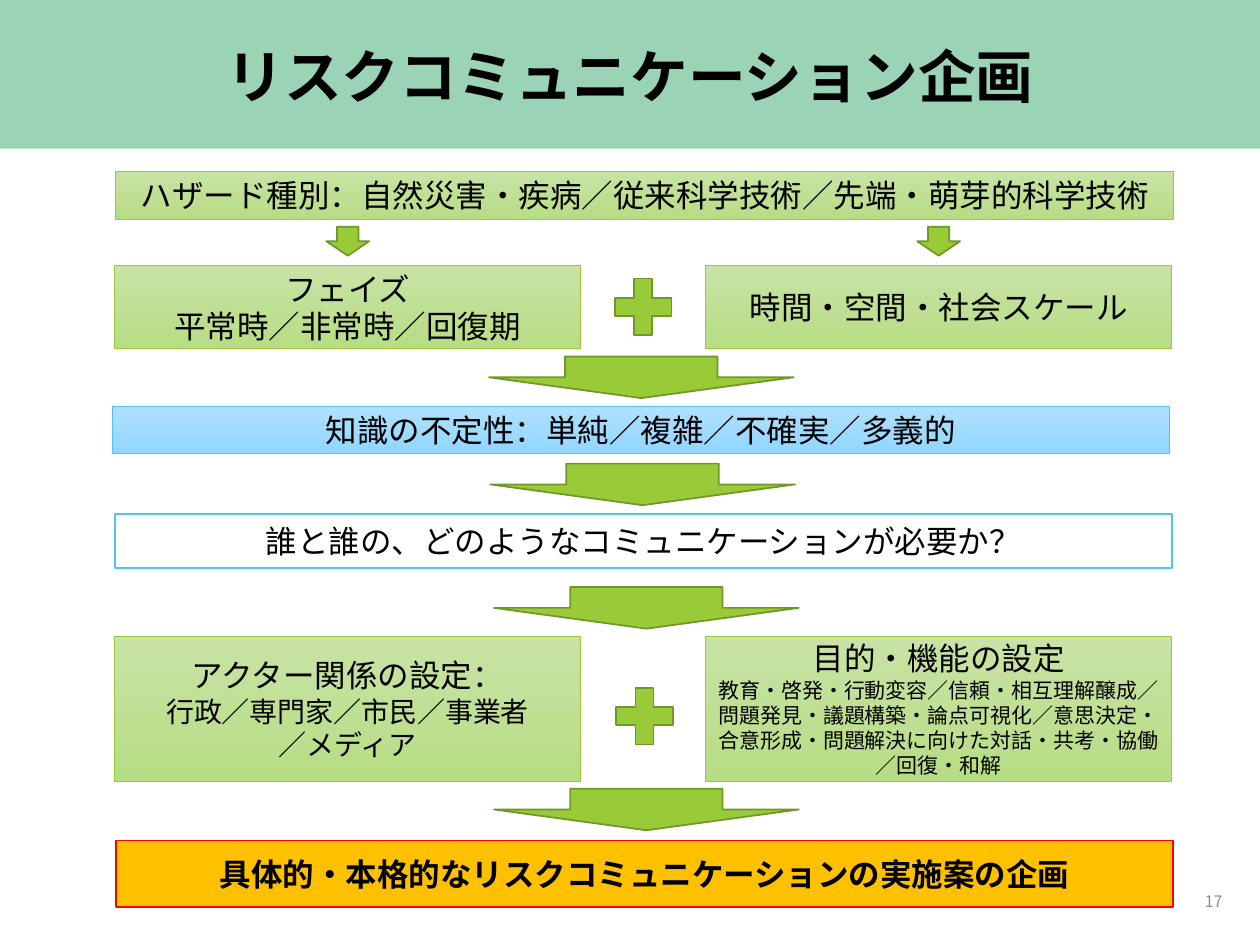
"""Build the risk communication planning flow slide."""
from lxml import etree
from pptx import Presentation
from pptx.dml.color import RGBColor
from pptx.enum.shapes import MSO_SHAPE
from pptx.enum.text import MSO_ANCHOR, PP_ALIGN
from pptx.oxml.ns import qn
from pptx.util import Pt

PX = 9144
FONT = "Noto Sans CJK JP"
RECTANGLE, PLUS, ARROW = MSO_SHAPE.RECTANGLE, MSO_SHAPE.MATH_PLUS, MSO_SHAPE.DOWN_ARROW
CENTER, RIGHT, MIDDLE = PP_ALIGN.CENTER, PP_ALIGN.RIGHT, MSO_ANCHOR.MIDDLE

BLACK = RGBColor(0x00, 0x00, 0x00)
WHITE = RGBColor(0xFF, 0xFF, 0xFF)
GRAY = RGBColor(0x8C, 0x8C, 0x8C)
MINT = RGBColor(0x9B, 0xD3, 0xB7)
GREEN = RGBColor(0x99, 0xCB, 0x38)
DARK_GREEN = RGBColor(0x71, 0x96, 0x29)
PALE_GREEN = RGBColor(0xC8, 0xE3, 0xA5)
LIGHT_GREEN = RGBColor(0xB7, 0xDD, 0x84)
BLUE = RGBColor(0x51, 0xC3, 0xF9)
PALE_BLUE = RGBColor(0xB0, 0xE0, 0xFE)
LIGHT_BLUE = RGBColor(0x90, 0xD6, 0xFF)
ORANGE = RGBColor(0xFF, 0xC0, 0x00)
RED = RGBColor(0xFF, 0x00, 0x00)

GREEN_BOX = {"fill": (PALE_GREEN, LIGHT_GREEN), "line": GREEN, "weight": 0.5}
BLUE_BOX = {"fill": (PALE_BLUE, LIGHT_BLUE), "line": BLUE, "weight": 0.5}
QUESTION_BOX = {"fill": (WHITE,), "line": BLUE, "weight": 1}
RESULT_BOX = {"fill": (ORANGE,), "line": RED, "weight": 1}
SYMBOL = {"fill": (GREEN,), "line": DARK_GREEN, "weight": 1}
HEADER = {"fill": (MINT,), "line": None}

WIDE, HALF = 839, 370
LEFT, SECOND = 91, 560


class FlowSlide:
    """Hold the font and the current page, and draw each kind of element."""

    def __init__(self, page, font):
        self.page = page
        self.font = font

    def shape(self, kind, area, style):
        """Draw a preset shape with a plain or a two-colour fill."""
        shape = self.page.shapes.add_shape(kind, *(n * PX for n in area))
        shape.shadow.inherit = False
        colors = style["fill"]
        if len(colors) == 1:
            shape.fill.solid()
            shape.fill.fore_color.rgb = colors[0]
        else:
            shape.fill.gradient()
            shape.fill.gradient_angle = 270
            for stop, color in zip(shape.fill.gradient_stops, colors):
                stop.color.rgb = color
        if style["line"] is None:
            shape.line.fill.background()
        else:
            shape.line.color.rgb = style["line"]
            shape.line.width = Pt(style["weight"])
        return shape

    def set_lines(self, shape, lines, color=BLACK, bold=False, align=CENTER, spacing=1.0):
        """Fill a shape with paragraphs given as (text, size) pairs."""
        frame = shape.text_frame
        frame.word_wrap = True
        frame.vertical_anchor = MIDDLE
        for index, (text, size) in enumerate(lines):
            para = frame.add_paragraph() if index else frame.paragraphs[0]
            para.alignment = align
            para.line_spacing = spacing
            span = para.add_run()
            span.text = text
            formats = {"name": self.font, "size": Pt(size), "bold": bold}
            for name, value in formats.items():
                setattr(span.font, name, value)
            span.font.color.rgb = color
            properties = span._r.get_or_add_rPr()
            etree.SubElement(properties, qn("a:ea")).set("typeface", self.font)

    def box(self, area, style, *lines, bold=False):
        """Draw a rectangle with centred text."""
        self.set_lines(self.shape(RECTANGLE, area, style), lines, bold=bold)

    def text(self, area, text, size, **formats):
        """Place one line of free text."""
        label = self.page.shapes.add_textbox(*(n * PX for n in area))
        self.set_lines(label, [(text, size)], **formats)


def main():
    """Build and save the deck."""
    deck = Presentation()
    deck.slide_width, deck.slide_height = 1000 * PX, 750 * PX
    flow = FlowSlide(deck.slides.add_slide(deck.slide_layouts[6]), FONT)

    flow.shape(RECTANGLE, (0, 0, 1000, 118), HEADER)
    flow.text((69, 21, 862, 85), "リスクコミュニケーション企画", 33, bold=True, spacing=0.9)
    flow.text((755, 695, 225, 40), "17", 9, color=GRAY, align=RIGHT)

    flow.box((92, 136, WIDE, 38), GREEN_BOX,
             ("ハザード種別：自然災害・疾病／従来科学技術／先端・萌芽的科学技術", 18))
    flow.box((LEFT, 211, HALF, 66), GREEN_BOX,
             ("フェイズ", 18), ("平常時／非常時／回復期", 18))
    flow.box((SECOND, 211, HALF, 66), GREEN_BOX, ("時間・空間・社会スケール", 18))
    flow.box((89, 323, WIDE, 37), BLUE_BOX,
             ("知識の不定性：単純／複雑／不確実／多義的", 18))
    flow.box((LEFT, 408, WIDE, 43), QUESTION_BOX,
             ("誰と誰の、どのようなコミュニケーションが必要か？", 18))
    flow.box((LEFT, 505, HALF, 115), GREEN_BOX,
             ("アクター関係の設定：", 18),
             ("行政／専門家／市民／事業者", 16),
             ("／メディア", 16))
    flow.box((SECOND, 505, HALF, 115), GREEN_BOX,
             ("目的・機能の設定", 18),
             ("教育・啓発・行動変容／信頼・相互理解醸成／問題発見・議題構築・論点可視化／"
              "意思決定・合意形成・問題解決に向けた対話・共考・協働／回復・和解", 12))
    flow.box((92, 667, WIDE, 53), RESULT_BOX,
             ("具体的・本格的なリスクコミュニケーションの実施案の企画", 18), bold=True)

    for left, top in ((480, 213), (481, 538)):
        flow.shape(PLUS, (left, top, 61, 61), SYMBOL)
    for left in (259, 728):
        flow.shape(ARROW, (left, 180, 34, 23), SYMBOL)
    for left, top in ((388, 283), (389, 368), (392, 466), (392, 626)):
        flow.shape(ARROW, (left, top, 242, 33), SYMBOL)

    deck.save("out.pptx")


if __name__ == "__main__":
    main()
